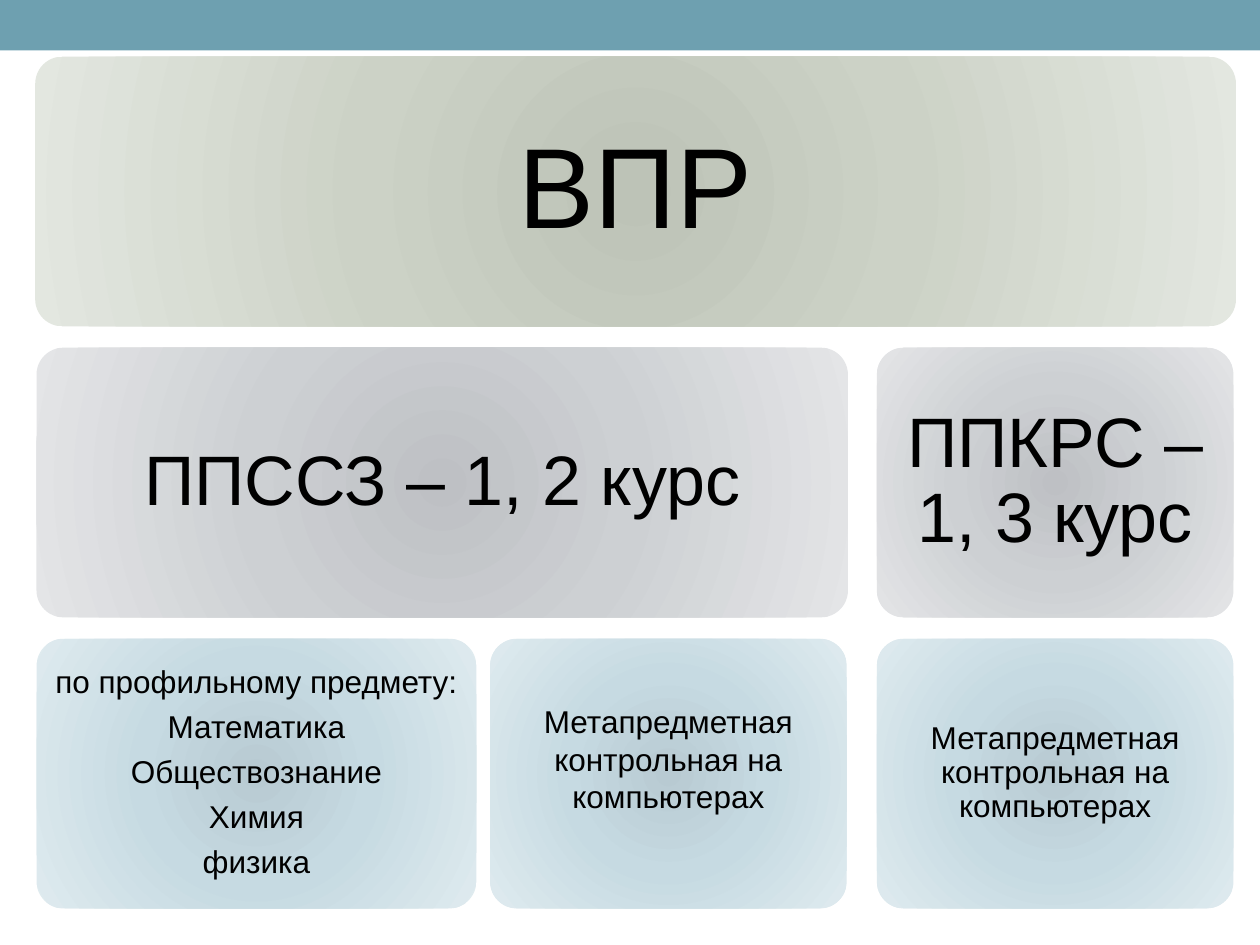
from lxml import etree
from pptx import Presentation
from pptx.dml.color import RGBColor
from pptx.enum.shapes import MSO_SHAPE as Shape
from pptx.enum.text import MSO_ANCHOR as Anchor, PP_ALIGN as Align
from pptx.oxml import parse_xml
from pptx.oxml.ns import nsdecls, qn
from pptx.util import Inches, Pt

GREEN = ("BDC3B7", "CCD2C6", "E3E7E0")
GREY = ("BEC0C4", "CDD0D3", "E4E5E7")
BLUE = ("B8CAD2", "C6DAE2", "DFEBEF")
STOPS = (0, 45, 100)

FIRST_ROW, ROW_STEP, BOX_HEIGHT = 0.45, 2.31, 2.14
LEFT, MIDDLE, RIGHT = 0.29, 3.89, 6.96
NARROW = 2.83
META_TEST = "Метапредметная контрольная на компьютерах"


def color(hex_value):
    return RGBColor.from_string(hex_value)


def add_shape(slide, kind, left, top, width, height):
    shape = slide.shapes.add_shape(
        kind, Inches(left), Inches(top), Inches(width), Inches(height))
    shape.shadow.inherit = False
    shape.line.fill.background()
    return shape


def set_radial_fill(shape, colors):
    """Fill the shape with a circular gradient, first colour at the centre."""
    shape.fill.gradient()
    gradient = shape.fill._xPr.find(qn("a:gradFill"))
    for child in list(gradient):
        gradient.remove(child)
    stops = etree.SubElement(gradient, qn("a:gsLst"))
    for position, hex_value in zip(STOPS, colors):
        stop = etree.SubElement(stops, qn("a:gs"), pos=str(position * 1000))
        etree.SubElement(stop, qn("a:srgbClr"), val=hex_value)
    gradient.append(parse_xml(
        f'<a:path {nsdecls("a")} path="circle">'
        '<a:fillToRect l="50000" t="50000" r="50000" b="50000"/></a:path>'))


def set_text(shape, text, size, inset, line_spacing, lift):
    """Centre the text; lift is extra bottom inset that moves it up."""
    frame = shape.text_frame
    frame.word_wrap = True
    frame.vertical_anchor = Anchor.MIDDLE
    frame.margin_left = frame.margin_right = frame.margin_top = Inches(inset)
    frame.margin_bottom = Inches(inset + lift)
    frame.text = text
    for paragraph in frame.paragraphs:
        paragraph.alignment = Align.CENTER
        paragraph.line_spacing = line_spacing
        paragraph.space_after = Pt(size * 0.35)
        for run in paragraph.runs:
            run.font.name = "Arial"
            run.font.size = Pt(size)
            run.font.color.rgb = color("000000")


def add_box(slide, row, left, width, colors, text, size, inset,
            line_spacing=0.9, lift=0):
    top = FIRST_ROW + row * ROW_STEP
    box = add_shape(slide, Shape.ROUNDED_RECTANGLE, left, top, width, BOX_HEIGHT)
    box.adjustments[0] = 0.1
    set_radial_fill(box, colors)
    set_text(box, text, size, inset, line_spacing, lift)


def main():
    presentation = Presentation()
    presentation.slide_width = Inches(10)
    presentation.slide_height = Inches(7.5)
    slide = presentation.slides.add_slide(presentation.slide_layouts[6])

    band = add_shape(slide, Shape.RECTANGLE, 0, 0, 10, 0.4)
    band.fill.solid()
    band.fill.fore_color.rgb = color("6EA0B0")

    subjects = "\n".join(("по профильному предмету:", "Математика",
                          "Обществознание", "Химия", "физика"))
    add_box(slide, 0, 0.28, 9.53, GREEN, "ВПР", 65, 0.21)
    add_box(slide, 1, LEFT, 6.44, GREY, "ППССЗ – 1, 2 курс", 40, 0.11)
    add_box(slide, 2, LEFT, 3.49, BLUE, subjects, 18, 0.01)
    add_box(slide, 2, MIDDLE, NARROW, BLUE, META_TEST, 18, 0.01,
            line_spacing=1.0, lift=0.24)
    add_box(slide, 1, RIGHT, NARROW, GREY, "ППКРС – 1, 3 курс", 40, 0.11)
    add_box(slide, 2, RIGHT, NARROW, BLUE, META_TEST, 18, 0.01)

    presentation.save("out.pptx")


if __name__ == "__main__":
    main()
